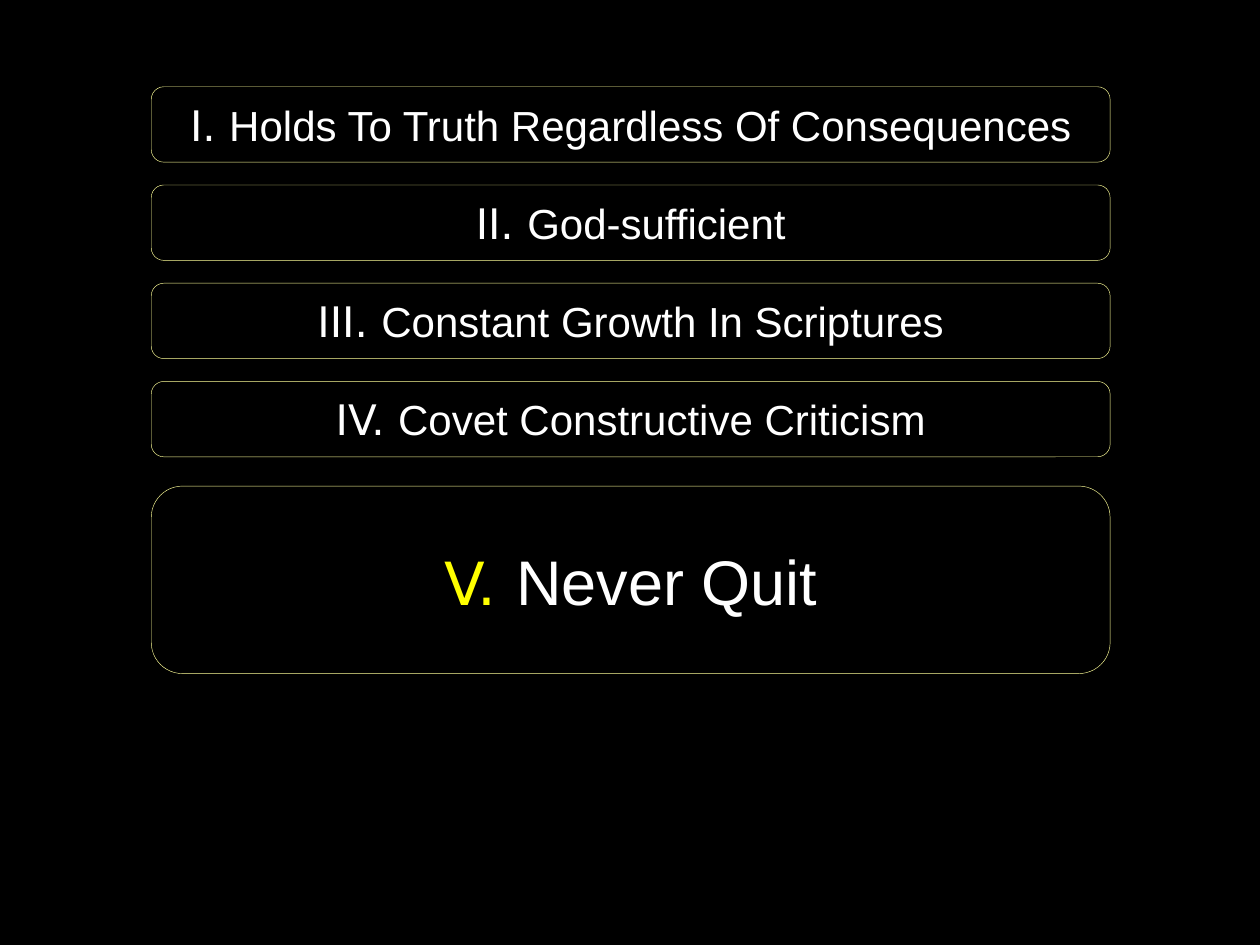
from dataclasses import dataclass
from pptx import Presentation
from pptx.dml.color import RGBColor as Rgb
from pptx.enum.shapes import MSO_SHAPE as Shape
from pptx.enum.text import MSO_ANCHOR as Anchor, PP_ALIGN as Align
from pptx.util import Cm, Pt

POINTS = [
    ("I. ", "Holds To Truth Regardless Of Consequences"),
    ("II. ", "God-sufficient"),
    ("III. ", "Constant Growth In Scriptures"),
    ("IV. ", "Covet Constructive Criticism"),
]
FINAL = ("V.", " ", "Never Quit")

LEFT, WIDTH = 3.05, 19.33
TOP, PITCH, ROW = 1.75, 1.98, 1.52
LAST_TOP, LAST_ROW = 9.8, 3.78


@dataclass(frozen=True)
class Theme:
    back: Rgb = Rgb(0, 0, 0)
    edge: Rgb = Rgb(0xFF, 0xFF, 0x99)
    text: Rgb = Rgb(0xFF, 0xFF, 0xFF)
    accent: Rgb = Rgb(0xFF, 0xFF, 0)
    number: str = "DejaVu Sans"
    body: str = "Arial"
    hair: float = 0.25
    small: int = 24
    mark: int = 34
    large: int = 36


THEME = Theme()


def add_box(slide, top, height, runs):
    """Add a rounded box whose runs are (text, font, size, colour)."""
    box = slide.shapes.add_shape(
        Shape.ROUNDED_RECTANGLE, Cm(LEFT), Cm(top), Cm(WIDTH), Cm(height))
    box.shadow.inherit = False
    box.fill.solid()
    box.fill.fore_color.rgb = THEME.back
    box.line.color.rgb = THEME.edge
    box.line.width = Pt(THEME.hair)
    frame = box.text_frame
    frame.word_wrap = True
    frame.vertical_anchor = Anchor.MIDDLE
    para = frame.paragraphs[0]
    para.alignment = Align.CENTER
    for text, face, size, color in runs:
        run = para.add_run()
        run.text = text
        run.font.name = face
        run.font.size = Pt(size)
        run.font.color.rgb = color


def main():
    """Build the slide of five points and save it."""
    deck = Presentation()
    deck.slide_width, deck.slide_height = Cm(25.4), Cm(19.05)
    slide = deck.slides.add_slide(deck.slide_layouts[6])
    slide.background.fill.solid()
    slide.background.fill.fore_color.rgb = THEME.back

    for i, (label, text) in enumerate(POINTS):
        add_box(slide, TOP + i * PITCH, ROW, [
            (label, THEME.number, THEME.small, THEME.text),
            (text, THEME.body, THEME.small, THEME.text),
        ])

    label, gap, text = FINAL
    add_box(slide, LAST_TOP, LAST_ROW, [
        (label, THEME.number, THEME.mark, THEME.accent),
        (gap, THEME.number, THEME.large, THEME.text),
        (text, THEME.body, THEME.large, THEME.text),
    ])
    deck.save("out.pptx")


if __name__ == "__main__":
    main()
